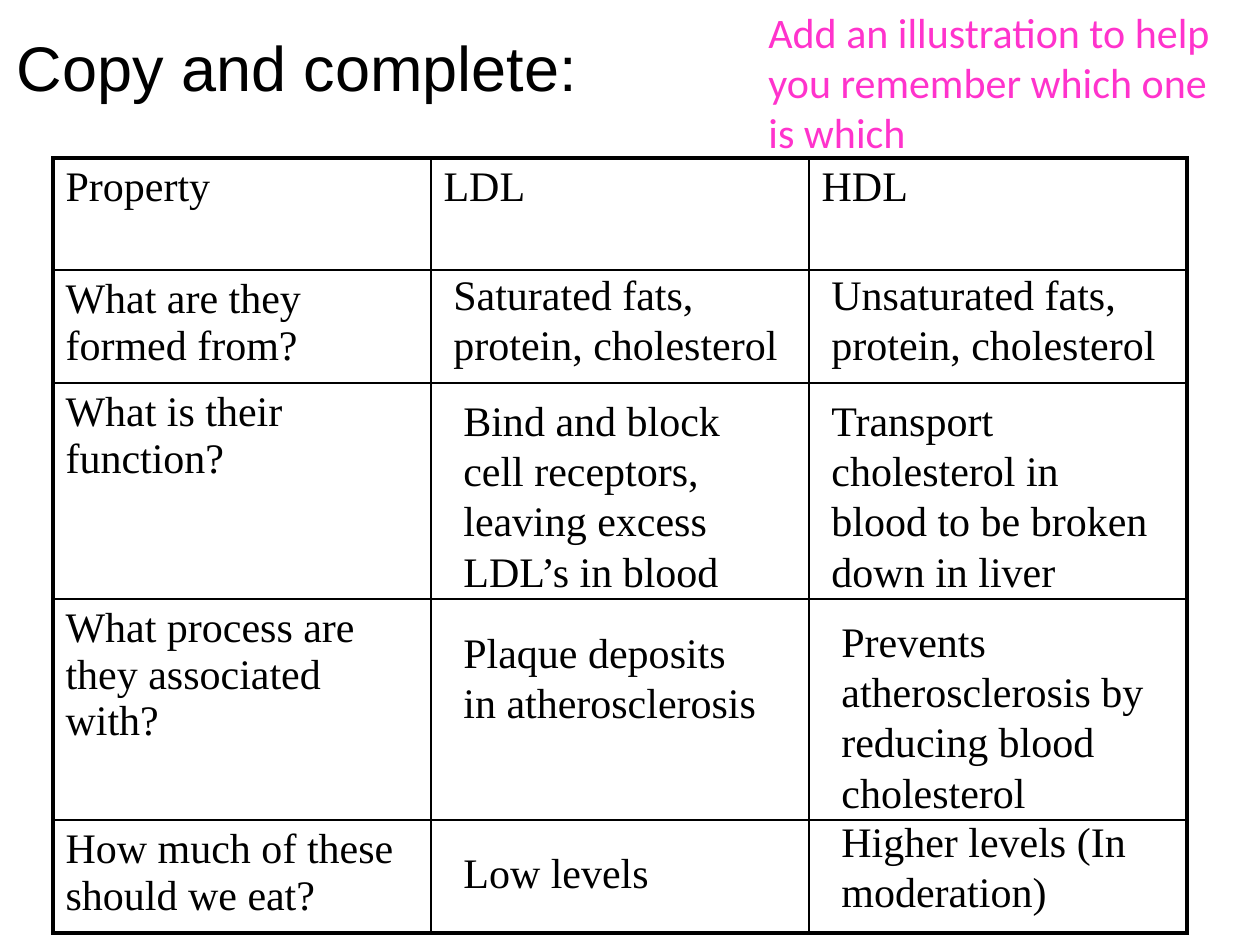
"""Build a slide comparing LDL and HDL in a table with answers laid over it."""
from dataclasses import dataclass

from lxml import etree
from pptx import Presentation
from pptx.dml.color import RGBColor
from pptx.enum.text import MSO_ANCHOR, PP_ALIGN
from pptx.oxml.ns import qn
from pptx.util import Pt

LEFT, MIDDLE = PP_ALIGN.LEFT, MSO_ANCHOR.MIDDLE
EMU_PER_PX = 914400 / 126
TITLE_ONLY = 5


@dataclass(frozen=True)
class Theme:
    ink: str = "000000"
    accent: str = "FF33CC"
    title_font: str = "Arial"
    body_font: str = "Times New Roman"
    note_font: str = "Calibri"
    title_size: float = 36
    body_size: float = 24
    leading: float = 28.8
    outer_line: float = 2.25
    inner_line: float = 1


def px(n):
    return round(n * EMU_PER_PX)


def write(tf, text, *, font, size, color, leading=None):
    p = tf.paragraphs[0]
    p.alignment = LEFT
    if leading:
        p.line_spacing = Pt(leading)
    r = p.add_run()
    r.text = text
    r.font.name, r.font.size = font, Pt(size)
    r.font.color.rgb = RGBColor.from_string(color)


def border(cell, side, width, color):
    ln = etree.SubElement(cell._tc.get_or_add_tcPr(), qn(f"a:ln{side}"), w=str(Pt(width)))
    fill = etree.SubElement(ln, qn("a:solidFill"))
    etree.SubElement(fill, qn("a:srgbClr"), val=color)


class SlideBuilder:
    def __init__(self, prs, theme):
        self.theme = theme
        self.s = prs.slides.add_slide(prs.slide_layouts[TITLE_ONLY])

    def title(self, text, x, y, w, h):
        t, sp = self.theme, self.s.shapes.title
        sp.left, sp.top, sp.width, sp.height = map(px, (x, y, w, h))
        sp.text_frame.vertical_anchor = MIDDLE
        write(sp.text_frame, text, font=t.title_font, size=t.title_size, color=t.ink)

    def text(self, text, x, y, w, h, font=None, color=None):
        t = self.theme
        tf = self.s.shapes.add_textbox(*map(px, (x, y, w, h))).text_frame
        tf.word_wrap = True
        write(tf, text, font=font or t.body_font, size=t.body_size,
              color=color or t.ink, leading=t.leading)

    def table(self, rows, x, y, col_width, heights):
        t, n_rows, n_cols = self.theme, len(rows), len(rows[0])
        table = self.s.shapes.add_table(
            n_rows, n_cols, px(x), px(y), px(col_width * n_cols), px(sum(heights))).table
        table.first_row = table.horz_banding = False
        for col in table.columns:
            col.width = px(col_width)
        for i, (labels, height) in enumerate(zip(rows, heights)):
            table.rows[i].height = px(height)
            for j, label in enumerate(labels):
                cell = table.cell(i, j)
                edges = {"L": j == 0, "R": j == n_cols - 1, "T": i == 0, "B": i == n_rows - 1}
                for side, outer in edges.items():
                    border(cell, side, t.outer_line if outer else t.inner_line, t.ink)
                cell.fill.background()
                if label:
                    write(cell.text_frame, label, font=t.body_font, size=t.body_size,
                          color=t.ink)


def main():
    prs = Presentation()
    prs.slide_width, prs.slide_height = px(1260), px(945)
    theme = Theme()
    slide = SlideBuilder(prs, theme)

    slide.title("Copy and complete:", 4, -13, 683, 158)
    questions = ["What are they formed from?", "What is their function?",
                 "What process are they associated with?",
                 "How much of these should we eat?"]
    rows = [["Property", "LDL", "HDL"]] + [[q, "", ""] for q in questions]
    slide.table(rows, 53, 158, 378, [112, 113, 216, 221, 113])

    slide.text("Add an illustration to help you remember which one is which",
               756, 0, 473, 165, font=theme.note_font, color=theme.accent)
    answers = [
        ("Saturated fats, protein, cholesterol", 441, 262, 357, 189),
        ("Unsaturated fats, protein, cholesterol", 819, 262, 357, 115),
        ("Bind and block cell receptors, leaving excess LDL’s in blood", 451, 388, 325, 290),
        ("Transport cholesterol in blood to be broken down in liver", 819, 388, 357, 290),
        ("Plaque deposits in atherosclerosis", 451, 620, 325, 190),
        ("Prevents atherosclerosis by reducing blood cholesterol", 829, 609, 336, 290),
        ("Low levels", 451, 840, 315, 139),
        ("Higher levels (In moderation)", 829, 809, 325, 189),
    ]
    for answer in answers:
        slide.text(*answer)
    prs.save("out.pptx")


if __name__ == "__main__":
    main()
